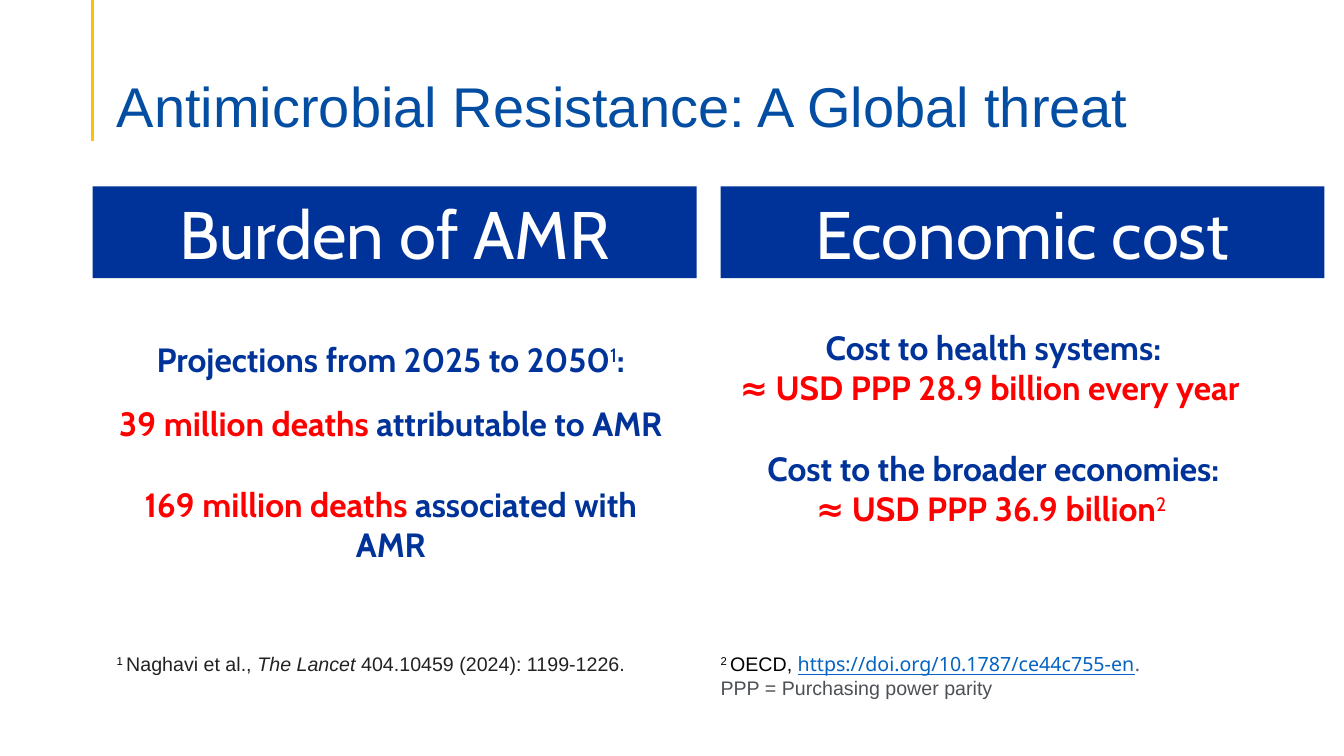
from lxml.etree import SubElement
from pptx import Presentation
from pptx.dml.color import RGBColor
from pptx.enum.shapes import MSO_CONNECTOR, MSO_SHAPE
from pptx.enum.text import MSO_ANCHOR, PP_ALIGN
from pptx.oxml.ns import qn
from pptx.util import Pt

NAVY = RGBColor(0x00, 0x33, 0x99)
TITLE_BLUE = RGBColor(0x03, 0x4E, 0xA2)
LINK_BLUE = RGBColor(0x05, 0x63, 0xC1)
GOLD = RGBColor(0xFF, 0xC0, 0x00)
RED = RGBColor(0xFF, 0x00, 0x00)
BLACK = RGBColor(0x00, 0x00, 0x00)
INK = RGBColor(0x22, 0x22, 0x22)
SLATE = RGBColor(0x58, 0x61, 0x79)
GREY = RGBColor(0x4D, 0x51, 0x56)
WHITE = RGBColor(0xFF, 0xFF, 0xFF)

LEFT_COLUMN, RIGHT_COLUMN = 66.24, 514.8

BURDEN = [
    (0, [("Projections from 2025 to 2050", NAVY), ("1", NAVY, "super"), (":", NAVY)]),
    (17, [("39 million deaths", RED), (" attributable to AMR", NAVY)]),
    (29, [("169 million deaths ", RED), ("associated with AMR", NAVY)]),
]
COST = [
    (0, [("Cost to health systems:", NAVY)]),
    (0, [("≈ USD PPP 28.9 billion every year ", RED)]),
    (29, [("Cost to the broader economies:", NAVY)]),
    (0, [("≈ USD PPP 36.9 billion", RED), ("2 ", RED, "super")]),
]
SOURCES = [
    ("1 ", BLACK, "super"),
    ("Naghavi et al.,\u00a0", INK),
    ("The Lancet", INK, "italic"),
    ("\u00a0404.10459 (2024): 1199-1226.\t", INK),
    ("2 ", BLACK, "super"),
    ("OECD, ", BLACK),
    ("https://doi.org/10.1787/ce44c755-en", LINK_BLUE, "link"),
    (".", SLATE, "link end"),
]


def add_span(para, text, color, style=""):
    span = para.add_run()
    span.text = text
    span.font.color.rgb = color
    if style == "super":
        span.font.bold = False
        span.font._element.set("baseline", "30000")
    elif style == "italic":
        span.font.italic = True
    elif style.startswith("link"):
        span.font.name = "Noto Sans"
        span.font.underline = style == "link"


def add_text_frame(page, left, top, width, height):
    frame = page.shapes.add_textbox(Pt(left), Pt(top), Pt(width), Pt(height)).text_frame
    frame.word_wrap = True
    return frame


def add_title(page, left, top, width, height):
    title = page.shapes.title
    title.left, title.top, title.width, title.height = Pt(left), Pt(top), Pt(width), Pt(height)
    frame = title.text_frame
    frame.word_wrap = True
    frame.vertical_anchor = MSO_ANCHOR.BOTTOM
    frame.margin_bottom = Pt(0)
    para = frame.paragraphs[0]
    para.text = "Antimicrobial Resistance: A Global threat"
    para.alignment = PP_ALIGN.LEFT
    para.line_spacing = 0.9
    para.font.name = "Arial"
    para.font.size = Pt(40)
    para.font.color.rgb = TITLE_BLUE


def add_accent(page, left, top, height):
    accent = page.shapes.add_connector(
        MSO_CONNECTOR.STRAIGHT, Pt(left), Pt(top), Pt(left), Pt(top + height))
    accent.line.color.rgb = GOLD
    accent.line.width = Pt(2.25)
    SubElement(accent._element.spPr, qn("a:effectLst"))


def add_banner(page, text, left, top, width, height):
    banner = page.shapes.add_shape(
        MSO_SHAPE.RECTANGLE, Pt(left), Pt(top), Pt(width), Pt(height))
    banner.shadow.inherit = False
    banner.fill.solid()
    banner.fill.fore_color.rgb = NAVY
    banner.line.fill.background()
    para = banner.text_frame.paragraphs[0]
    para.text = text
    para.alignment = PP_ALIGN.CENTER
    para.font.name = "Cabin"
    para.font.size = Pt(48)
    para.font.color.rgb = WHITE


def add_statements(page, statements, left, top, width, height, inset_left, inset_top):
    frame = add_text_frame(page, left, top, width, height)
    frame.margin_left = Pt(inset_left)
    frame.margin_top = Pt(inset_top)
    for number, (gap, spans) in enumerate(statements):
        para = frame.add_paragraph() if number else frame.paragraphs[0]
        para.alignment = PP_ALIGN.CENTER
        para.space_before = Pt(gap)
        para.font.name = "Cabin"
        para.font.size = Pt(24)
        para.font.bold = True
        for span in spans:
            add_span(para, *span)


def add_footnotes(page, left, top, width, height):
    frame = add_text_frame(page, left, top, width, height)
    second_column = Pt(RIGHT_COLUMN - left - 7.2)
    sources = frame.paragraphs[0]
    tabs = SubElement(sources._p.get_or_add_pPr(), qn("a:tabLst"))
    SubElement(tabs, qn("a:tab"), pos=str(second_column), algn="l")
    abbreviation = frame.add_paragraph()
    abbreviation._p.get_or_add_pPr().set("marL", str(second_column))
    for para in (sources, abbreviation):
        para.font.name = "Arial"
        para.font.size = Pt(14)
    for span in SOURCES:
        add_span(sources, *span)
    add_span(abbreviation, "PPP = Purchasing power parity", GREY)


def add_threat_slide(deck):
    page = deck.slides.add_slide(deck.slide_layouts[5])
    add_accent(page, LEFT_COLUMN, 0, 100.8)
    add_title(page, 76.32, 38.16, 828, 61.92)
    for text, left in (("Burden of AMR", LEFT_COLUMN), ("Economic cost", RIGHT_COLUMN)):
        add_banner(page, text, left, 133.2, 431.28, 65.5)
    add_statements(page, BURDEN, LEFT_COLUMN, 208.8, 419.76, 242.64, 13, 33)
    add_statements(page, COST, RIGHT_COLUMN, 229.68, 389.52, 152.64, 7.2, 3.6)
    add_footnotes(page, 76.32, 462.24, 828, 41.04)


def main():
    deck = Presentation()
    deck.slide_width, deck.slide_height = Pt(960), Pt(540)
    add_threat_slide(deck)
    deck.save("out.pptx")


if __name__ == "__main__":
    main()
